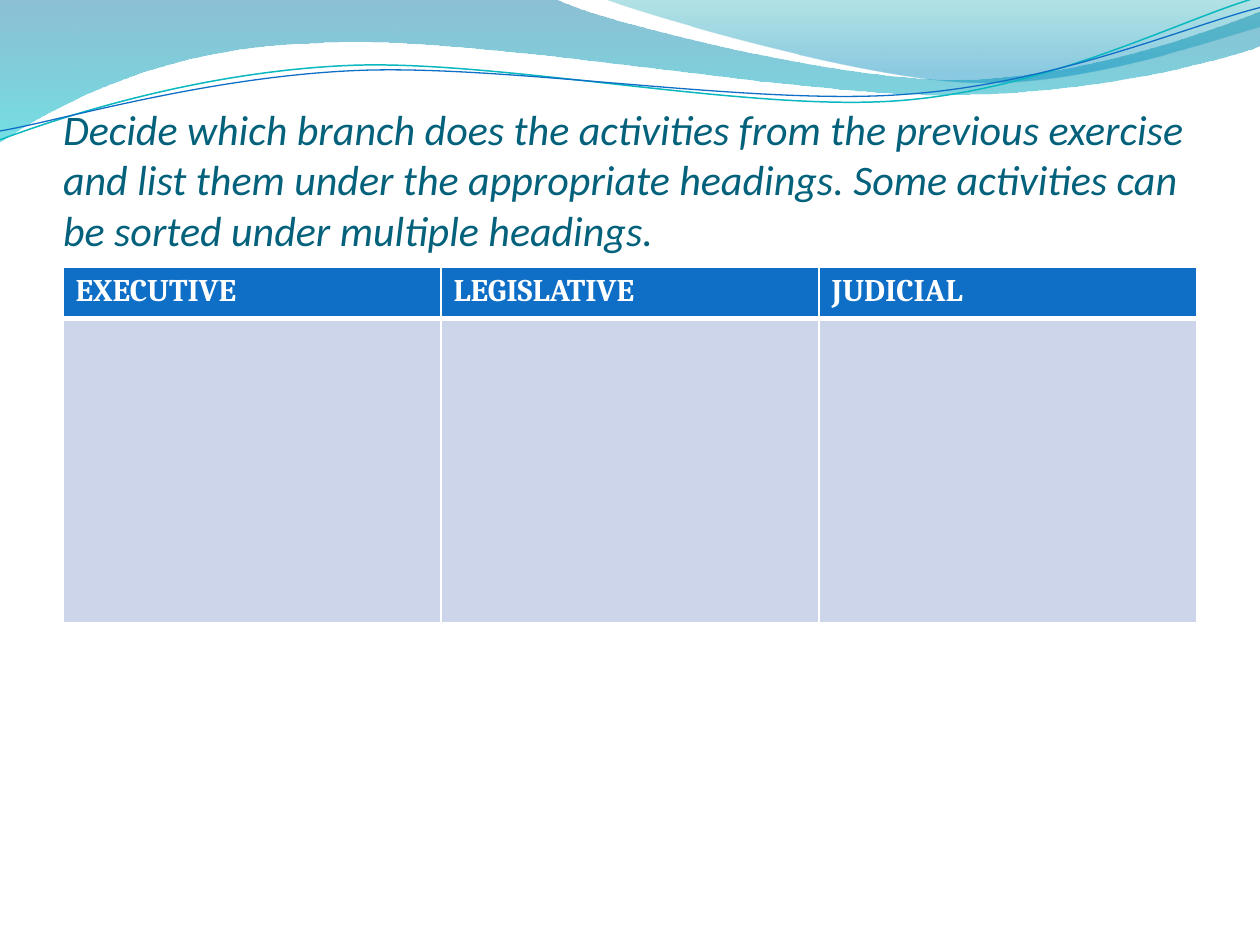
import pptx
import pptx.dml.color
import pptx.enum.text
import pptx.oxml
import pptx.oxml.ns
import pptx.util
from pptx.util import Inches

TITLE = ("Decide which branch does the activities from the previous exercise "
         "and list them under the appropriate headings. Some activities can "
         "be sorted under multiple headings.")
HEADINGS = ["EXECUTIVE", "LEGISLATIVE", "JUDICIAL"]
THEME = {
    "title": "04617B", "title_font": "Calibri", "title_size": 24,
    "header": "0F6FC6", "body": "CCD5EA", "border": "FFFFFF",
    "header_text": "FFFFFF", "table_font": "Cambria", "table_size": 18,
    "thin": 1, "thick": 3,
}
ROW_HEIGHTS = [0.41, 2.41]

# Each outline is a list of steps in inches: 2 numbers are a straight
# step, 6 numbers are a cubic curve (two handles and the end).
WAVES = [
    {"outline": [(0, 0), (4.4, -0.01), (4.76, 0.17, 6.64, 0.63, 7.58, 0.63),
                 (8.53, 0.63, 9.58, 0.26, 10, 0.09), (10.01, 0.36),
                 (9.83, 0.44, 8.7, 0.76, 7.46, 0.75),
                 (6.22, 0.75, 3.82, 0.28, 2.57, 0.34),
                 (1.29, 0.36, 0.46, 0.83, -0.01, 1.13)],
     "gradient": [(0, "0074A1", 45), (1, "00C6CF", 55)]},
    {"outline": [(4.79, -0.01), (5.09, 0.11, 6.82, 0.62, 7.69, 0.65),
                 (8.56, 0.69, 9.61, 0.32, 10, 0.21), (10, 0)],
     "gradient": [(0, "00A1A9", 30), (0.8, "008BBF", 45)]},
    {"outline": [(0, 1.11), (0.48, 0.93, 1.58, 0.57, 2.77, 0.52),
                 (3.95, 0.47, 5.93, 0.89, 7.13, 0.8),
                 (8.33, 0.71, 9.38, 0.15, 9.98, -0.02)],
     "line": ("0AB8BF", 0.85)},
    {"outline": [(0, 1.04), (0.47, 0.96, 1.64, 0.61, 2.83, 0.56),
                 (4.03, 0.51, 5.97, 0.84, 7.17, 0.75),
                 (8.36, 0.67, 9.41, 0.21, 10, 0.06)],
     "line": ("0F6FC6", 0.75)},
]


def rgb(value):
    return pptx.dml.color.RGBColor.from_string(value)


def build_outline(slide, outline, close):
    """Build a freeform through all points, then join each curve's three."""
    points = [(Inches(step[i]), Inches(step[i + 1]))
              for step in outline for i in range(0, len(step), 2)]
    builder = slide.shapes.build_freeform(*points[0])
    builder.add_line_segments(points[1:], close=close)
    shape = builder.convert_to_shape()
    segments = iter(list(shape.element.iter(pptx.oxml.ns.qn("a:lnTo"))))
    for step in outline[1:]:
        first = next(segments)
        if len(step) == 6:
            curve = pptx.oxml.parse_xml(
                f'<a:cubicBezTo {pptx.oxml.ns.nsdecls("a")}/>')
            first.addprevious(curve)
            for segment in (first, next(segments), next(segments)):
                curve.append(segment[0])
                segment.getparent().remove(segment)
    return shape


def set_gradient(shape, stops):
    """Fill from top to bottom; stops are position, colour, opacity %."""
    shape.fill.gradient()
    shape.fill.gradient_angle = 270
    for stop, (position, color, _) in zip(shape.fill.gradient_stops, stops):
        stop.position = position
        stop.color.rgb = rgb(color)
    colors = shape.element.spPr.iter(pptx.oxml.ns.qn("a:srgbClr"))
    for element, (_, _, opacity) in zip(colors, stops):
        element.append(pptx.oxml.parse_xml(
            f'<a:alpha {pptx.oxml.ns.nsdecls("a")} val="{opacity * 1000}"/>'))


def add_wave(slide, wave):
    shape = build_outline(slide, wave["outline"], close="gradient" in wave)
    shape.shadow.inherit = False
    if "gradient" in wave:
        set_gradient(shape, wave["gradient"])
        shape.line.fill.background()
    else:
        color, width = wave["line"]
        shape.fill.background()
        shape.line.color.rgb = rgb(color)
        shape.line.width = pptx.util.Pt(width)


def format_title(slide):
    title = slide.shapes.title
    slide.shapes.element.append(title.element)  # in front of the waves
    title.left, title.top = Inches(0.5), Inches(0.77)
    title.width, title.height = Inches(9), Inches(1.25)
    frame = title.text_frame
    frame.text = TITLE
    frame.word_wrap = True
    frame.auto_size = pptx.enum.text.MSO_AUTO_SIZE.NONE
    frame.vertical_anchor = pptx.enum.text.MSO_ANCHOR.BOTTOM
    frame.margin_left = frame.margin_right = frame.margin_bottom = 0
    frame.margin_top = Inches(0.05)
    paragraph = frame.paragraphs[0]
    paragraph.alignment = pptx.enum.text.PP_ALIGN.LEFT
    font = paragraph.font
    font.name, font.size = THEME["title_font"], pptx.util.Pt(THEME["title_size"])
    font.italic = True
    font.color.rgb = rgb(THEME["title"])


def set_borders(cell, widths):
    """Draw the sides; widths are points for left, right, top, bottom."""
    properties = cell._tc.get_or_add_tcPr()
    for index, (side, width) in enumerate(zip("LRTB", widths)):
        properties.insert(index, pptx.oxml.parse_xml(
            f'<a:ln{side} {pptx.oxml.ns.nsdecls("a")} w="{pptx.util.Pt(width)}">'
            f'<a:solidFill><a:srgbClr val="{THEME["border"]}"/></a:solidFill>'
            f'</a:ln{side}>'))


def add_branch_table(slide):
    table = slide.shapes.add_table(
        len(ROW_HEIGHTS), len(HEADINGS), Inches(0.5), Inches(2.12),
        Inches(9), Inches(sum(ROW_HEIGHTS))).table
    for row, height in zip(table.rows, ROW_HEIGHTS):
        row.height = Inches(height)
    thin, thick = THEME["thin"], THEME["thick"]
    for column, heading in enumerate(HEADINGS):
        header, body = table.cell(0, column), table.cell(1, column)
        header.text = heading
        font = header.text_frame.paragraphs[0].font
        font.name, font.size = THEME["table_font"], pptx.util.Pt(THEME["table_size"])
        font.bold = True
        font.color.rgb = rgb(THEME["header_text"])
        for cell, color in ((header, THEME["header"]), (body, THEME["body"])):
            cell.fill.solid()
            cell.fill.fore_color.rgb = rgb(color)
        set_borders(header, (thin, thin, thin, thick))
        set_borders(body, (thin, thin, thick, thin))


def main():
    presentation = pptx.Presentation()
    presentation.slide_width, presentation.slide_height = Inches(10), Inches(7.5)
    slide = presentation.slides.add_slide(presentation.slide_layouts[5])
    for wave in WAVES:
        add_wave(slide, wave)
    format_title(slide)
    add_branch_table(slide)
    presentation.save("out.pptx")


if __name__ == "__main__":
    main()
